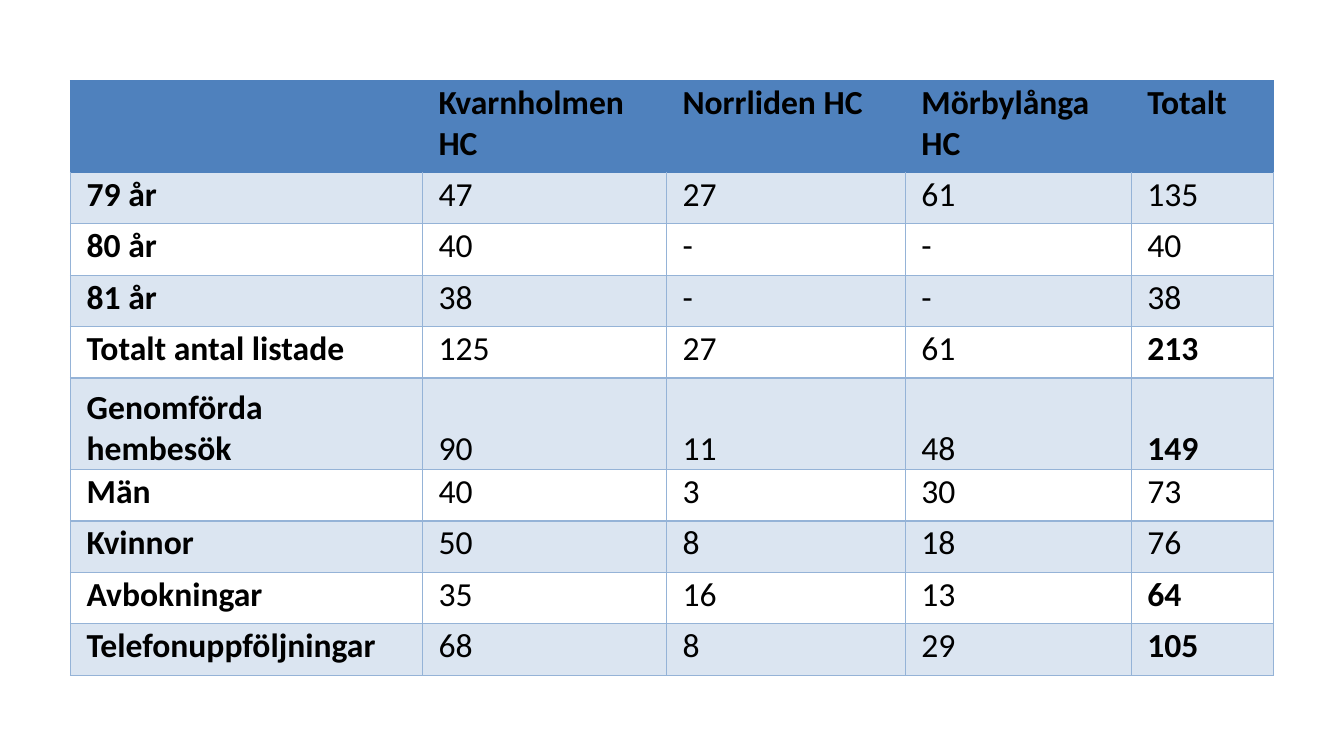
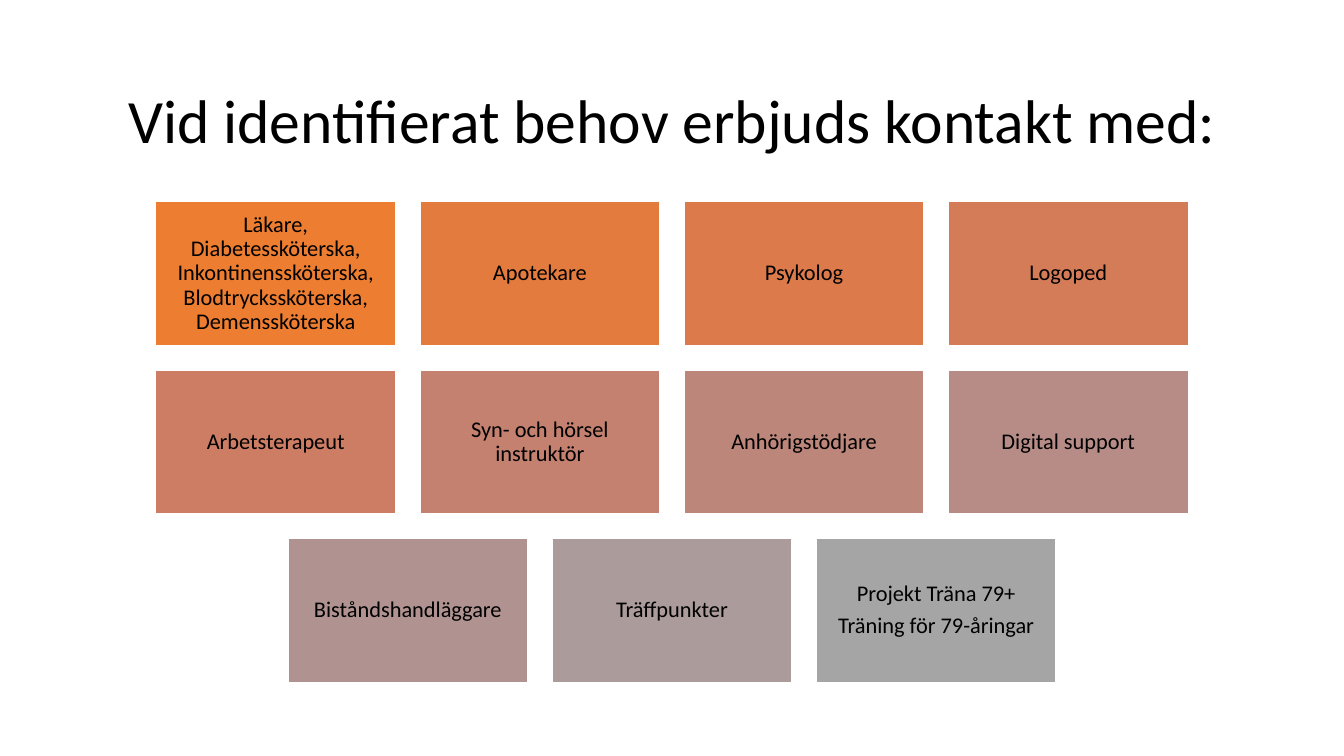
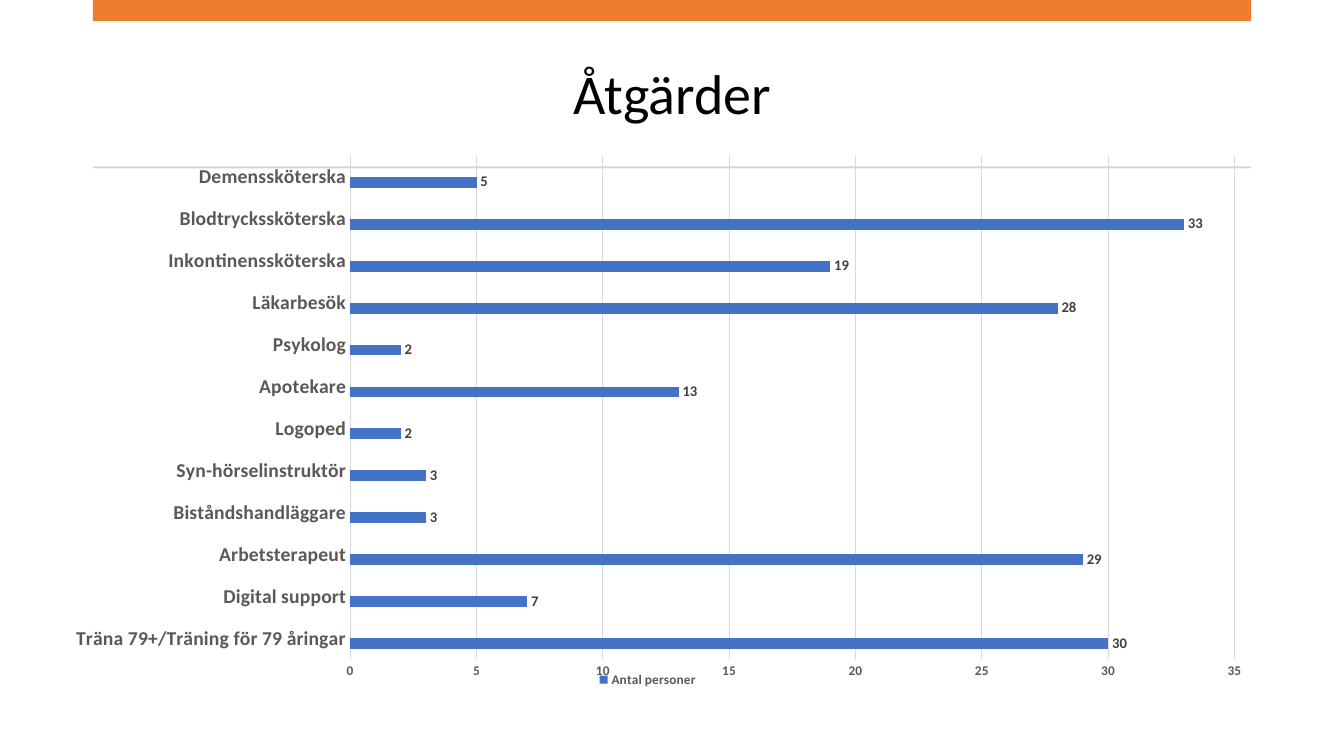
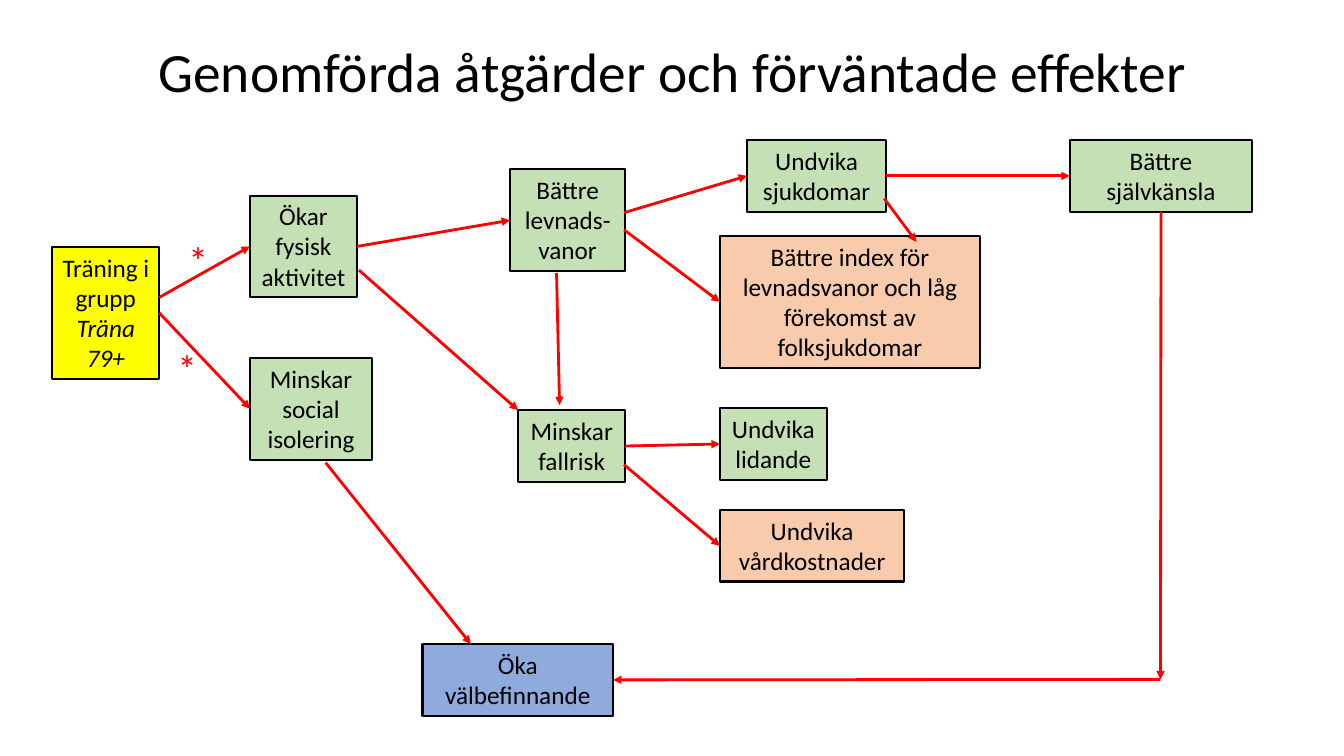
"""Build four slides on preventive home visits: results, contacts, measures and expected effects."""
from dataclasses import dataclass

from pptx import Presentation
from pptx.chart.data import CategoryChartData
from pptx.dml.color import RGBColor
from pptx.enum.chart import XL_CHART_TYPE, XL_LABEL_POSITION, XL_LEGEND_POSITION, XL_TICK_MARK
from pptx.enum.shapes import MSO_CONNECTOR, MSO_SHAPE
from pptx.enum.text import MSO_ANCHOR, PP_ALIGN
from pptx.oxml import parse_xml
from pptx.oxml.ns import nsdecls, qn
from pptx.util import Inches, Pt

RECTANGLE = MSO_SHAPE.RECTANGLE
STRAIGHT = MSO_CONNECTOR.STRAIGHT
LEFT, CENTER = PP_ALIGN.LEFT, PP_ALIGN.CENTER
TOP, MIDDLE, BOTTOM = MSO_ANCHOR.TOP, MSO_ANCHOR.MIDDLE, MSO_ANCHOR.BOTTOM
NO_TICK = XL_TICK_MARK.NONE
SITE_BOTTOM, SITE_LEFT, SITE_RIGHT = 2, 1, 3


@dataclass(frozen=True)
class Theme:
    font: str = "Calibri"
    text: str = "000000"
    white: str = "FFFFFF"
    accent: str = "ED7D31"
    rule: str = "D5D5D5"
    header: str = "4F81BD"
    band: str = "DBE5F1"
    border: str = "95B3D7"
    bar: str = "4472C4"
    grid: str = "D9D9D9"
    axis_text: str = "595959"
    label_text: str = "404040"
    activity: str = "FFFF00"
    effect: str = "C5E0B4"
    society: str = "F8CBAD"
    wellbeing: str = "8FAADC"
    arrow: str = "FF0000"
    contacts: tuple = ("ED7D31", "E47B3E", "DC7A4B", "D47B58", "CC7D64", "C48170",
                       "BD867B", "B78C86", "B09391", "AB9C9B", "A5A5A5")
    table_size: float = 24
    contact_size: float = 16
    flow_size: float = 18
    star_size: float = 28
    category_size: float = 14
    label_size: float = 10.5
    chart_size: float = 9.5


THEME = Theme()


def rgb(color):
    return RGBColor.from_string(color)


def write(frame, text, size, color=THEME.text, bold=False, align=CENTER, anchor=TOP,
          spacing=None, after=None, insets=(0.1, 0.05, 0.1, 0.05)):
    frame.word_wrap = True
    frame.vertical_anchor = anchor
    frame.margin_left, frame.margin_top, frame.margin_right, frame.margin_bottom = map(Inches, insets)
    frame.text = text
    for paragraph in frame.paragraphs:
        paragraph.alignment = align
        paragraph.line_spacing = spacing
        paragraph.space_after = after
        for run in paragraph.runs:
            run.font.name = THEME.font
            run.font.size = Pt(size)
            run.font.bold = bold
            run.font.color.rgb = rgb(color)


prs = Presentation()
prs.slide_width, prs.slide_height = Inches(13.33), Inches(7.5)
visits, contacts, measures, effects = [prs.slides.add_slide(prs.slide_layouts[6]) for _ in range(4)]

titles = [
    (contacts, "Vid identifierat behov erbjuds kontakt med:", 0.61, 1.24, 44),
    (measures, "Åtgärder", 0.37, 1.18, 40),
    (effects, "Genomförda åtgärder och förväntade effekter", 0.34, 0.8, 39.6),
]
for slide, text, top, height, size in titles:
    title = slide.shapes.add_textbox(Inches(0.92), Inches(top), Inches(11.5), Inches(height))
    write(title.text_frame, text, size, anchor=MIDDLE, spacing=0.9)

visit_rows = [
    ("", "Kvarnholmen HC", "Norrliden HC", "Mörbylånga HC", "Totalt"),
    ("79 år", "47", "27", "61", "135"),
    ("80 år", "40", "-", "-", "40"),
    ("81 år", "38", "-", "-", "38"),
    ("Totalt antal listade", "125", "27", "61", "213"),
    ("Genomförda hembesök", "90", "11", "48", "149"),
    ("Män", "40", "3", "30", "73"),
    ("Kvinnor", "50", "8", "18", "76"),
    ("Avbokningar", "35", "16", "13", "64"),
    ("Telefonuppföljningar", "68", "8", "29", "105"),
]
column_widths = (3.49, 2.42, 2.37, 2.24, 1.41)
two_line_rows = (0, 5)
key_totals = ("213", "149", "64", "105")
visit_table = visits.shapes.add_table(len(visit_rows), len(column_widths), Inches(0.7), Inches(0.8),
                                      Inches(11.93), Inches(5.9)).table
visit_table.first_row = visit_table.horz_banding = False
for column, width in zip(visit_table.columns, column_widths):
    column.width = Inches(width)
for r, values in enumerate(visit_rows):
    visit_table.rows[r].height = Inches(0.91 if r in two_line_rows else 0.51)
    for c, value in enumerate(values):
        cell = visit_table.cell(r, c)
        properties = cell._tc.get_or_add_tcPr()
        for side in "LRTB":
            edge = THEME.header if r == 0 or (r == 1 and side == "T") else THEME.border
            properties.append(parse_xml(
                f'<a:ln{side} {nsdecls("a")} w="12700"><a:solidFill><a:srgbClr val="{edge}"/>'
                f'</a:solidFill></a:ln{side}>'))
        cell.fill.solid()
        cell.fill.fore_color.rgb = rgb(THEME.header if r == 0 else THEME.band if r % 2 else THEME.white)
        write(cell.text_frame, value, THEME.table_size, align=LEFT,
              bold=r == 0 or c == 0 or value in key_totals)
        cell.margin_left = cell.margin_right = Inches(0.16)
        cell.margin_top, cell.margin_bottom = Inches(0.02), 0
        cell.vertical_anchor = BOTTOM if r == 5 else TOP

contact_rows = [
    ("Läkare, Diabetessköterska, Inkontinenssköterska, Blodtryckssköterska, Demenssköterska",
     "Apotekare", "Psykolog", "Logoped"),
    ("Arbetsterapeut", "Syn- och hörsel instruktör", "Anhörigstödjare", "Digital support"),
    ("Biståndshandläggare", "Träffpunkter", "Projekt Träna 79+\nTräning för 79-åringar"),
]
card_width, card_height, card_gap = 2.38, 1.43, 0.24
card_colors = iter(THEME.contacts)
for r, names in enumerate(contact_rows):
    row_left = (13.33 - len(names) * (card_width + card_gap) + card_gap) / 2
    for c, name in enumerate(names):
        card = contacts.shapes.add_shape(
            RECTANGLE, Inches(row_left + c * (card_width + card_gap)),
            Inches(2 + r * (card_height + card_gap)), Inches(card_width), Inches(card_height))
        card.shadow.inherit = False
        card.fill.solid()
        card.fill.fore_color.rgb = rgb(next(card_colors))
        card.line.color.rgb = rgb(THEME.white)
        card.line.width = Pt(1)
        write(card.text_frame, name, THEME.contact_size, anchor=MIDDLE, spacing=0.9,
              after=Pt(5.6), insets=(0.07,) * 4)

for top, height, color in [(0, 0.21, THEME.accent), (1.65, 0.02, THEME.rule)]:
    band = measures.shapes.add_shape(RECTANGLE, Inches(0.92), Inches(top), Inches(11.49), Inches(height))
    band.shadow.inherit = False
    band.fill.solid()
    band.fill.fore_color.rgb = rgb(color)
    band.line.fill.background()

persons = {
    "Träna 79+/Träning för 79 åringar": 30, "Digital support": 7, "Arbetsterapeut": 29,
    "Biståndshandläggare": 3, "Syn-hörselinstruktör": 3, "Logoped": 2, "Apotekare": 13,
    "Psykolog": 2, "Läkarbesök": 28, "Inkontinenssköterska": 19, "Blodtryckssköterska": 33,
    "Demenssköterska": 5,
}
chart_data = CategoryChartData()
chart_data.categories = list(persons)
chart_data.add_series("Antal personer", list(persons.values()))
chart_data.add_series("", [None] * len(persons))
chart = measures.shapes.add_chart(XL_CHART_TYPE.BAR_CLUSTERED, Inches(0.45), Inches(1.54),
                                  Inches(11.95), Inches(5.32), chart_data).chart
chart.has_title = False
chart.has_legend = True
chart.legend.position = XL_LEGEND_POSITION.BOTTOM
chart.legend.include_in_layout = False
category_axis, value_axis = chart.category_axis, chart.value_axis
value_axis.minimum_scale, value_axis.maximum_scale, value_axis.major_unit = 0, 35, 5
category_axis.major_tick_mark = value_axis.major_tick_mark = NO_TICK
value_axis.format.line.fill.background()
for line in (category_axis.format.line, value_axis.major_gridlines.format.line):
    line.color.rgb = rgb(THEME.grid)
    line.width = Pt(0.75)

bars = chart.plots[0]
bars.gap_width = 182
bars.vary_by_categories = False
for series, color in zip(bars.series, (THEME.bar, THEME.accent)):
    series.format.fill.solid()
    series.format.fill.fore_color.rgb = rgb(color)
bar_labels = bars.series[0].data_labels
bar_labels.show_value = True
bar_labels.position = XL_LABEL_POSITION.OUTSIDE_END

chart_fonts = [
    (chart.font, THEME.chart_size, THEME.text),
    (category_axis.tick_labels.font, THEME.category_size, THEME.axis_text),
    (value_axis.tick_labels.font, THEME.chart_size, THEME.axis_text),
    (chart.legend.font, THEME.chart_size, THEME.axis_text),
    (bar_labels.font, THEME.label_size, THEME.label_text),
]
for font, size, color in chart_fonts:
    font.name = THEME.font
    font.size = Pt(size)
    font.bold = True
    font.color.rgb = rgb(color)

chart_root = chart.element
chart_root.xpath("c:chart")[0].addnext(parse_xml(
    f'<c:spPr {nsdecls("c", "a")}><a:noFill/><a:ln><a:noFill/></a:ln></c:spPr>'))
chart_root.xpath(".//c:legendPos")[0].addnext(parse_xml(
    f'<c:legendEntry {nsdecls("c")}><c:idx val="0"/><c:delete val="1"/></c:legendEntry>'))
plot_area = chart_root.xpath(".//c:plotArea")[0]
for layout in plot_area.findall(qn("c:layout")):
    plot_area.remove(layout)
plot_area.insert(0, parse_xml(
    f'<c:layout {nsdecls("c")}><c:manualLayout><c:layoutTarget val="inner"/>'
    '<c:xMode val="edge"/><c:yMode val="edge"/><c:x val="0.253"/><c:y val="0"/>'
    '<c:w val="0.734"/><c:h val="0.94"/></c:manualLayout></c:layout>'))

flow_boxes = {
    "training": ("Träning i grupp\nTräna 79+", 0.52, 2.45, 1.06, 1.31, THEME.activity),
    "esteem": ("Bättre självkänsla", 10.61, 1.39, 1.81, 0.71, THEME.effect),
    "isolation": ("Minskar social isolering", 2.48, 3.55, 1.21, 1.01, THEME.effect),
    "habits": ("Bättre levnads-vanor", 5.06, 1.68, 1.14, 1.01, THEME.effect),
    "diseases": ("Undvika sjukdomar", 7.41, 1.39, 1.38, 0.71, THEME.effect),
    "index": ("Bättre index för levnadsvanor och låg förekomst av folksjukdomar",
              7.14, 2.34, 2.58, 1.31, THEME.society),
    "activity": ("Ökar fysisk aktivitet", 2.48, 1.94, 1.06, 1.01, THEME.effect),
    "falls": ("Minskar fallrisk", 5.14, 4.07, 1.06, 0.71, THEME.effect),
    "suffering": ("Undvika lidande", 7.14, 4.05, 1.06, 0.71, THEME.effect),
    "costs": ("Undvika vårdkostnader", 7.14, 5.06, 1.83, 0.71, THEME.society),
    "wellbeing": ("Öka välbefinnande", 4.19, 6.39, 1.89, 0.71, THEME.wellbeing),
}
steps = {}
for key, (text, left, top, width, height, color) in flow_boxes.items():
    step = effects.shapes.add_shape(RECTANGLE, Inches(left), Inches(top), Inches(width), Inches(height))
    step.shadow.inherit = False
    step.fill.solid()
    step.fill.fore_color.rgb = rgb(color)
    step.line.color.rgb = rgb(THEME.text)
    step.line.width = Pt(1.5)
    write(step.text_frame, text, THEME.flow_size)
    steps[key] = step
steps["training"].text_frame.paragraphs[1].runs[0].font.italic = True

arrows = [
    ((1.58, 2.95), ("activity", SITE_LEFT)),
    (("activity", SITE_RIGHT), ("habits", SITE_LEFT)),
    ((6.19, 2.11), ("diseases", SITE_LEFT)),
    (("diseases", SITE_RIGHT), ("esteem", SITE_LEFT)),
    ((3.56, 2.68), (5.14, 4.07)),
    ((6.19, 4.61), ("costs", SITE_LEFT)),
    (("falls", SITE_RIGHT), ("suffering", SITE_LEFT)),
    (("training", SITE_RIGHT), ("isolation", SITE_LEFT)),
    ((3.23, 4.59), (4.67, 6.39)),
    ((11.51, 6.74), ("wellbeing", SITE_RIGHT)),
    (("esteem", SITE_BOTTOM), (11.51, 6.74)),
    ((6.19, 2.28), ("index", SITE_LEFT)),
    ((8.77, 1.97), (9.09, 2.4)),
    ((5.52, 2.71), (5.55, 4.02)),
]
for start, end in arrows:
    arrow = effects.shapes.add_connector(STRAIGHT, 0, 0, 0, 0)
    if start[0] in steps:
        arrow.begin_connect(steps[start[0]], start[1])
    else:
        arrow.begin_x, arrow.begin_y = map(Inches, start)
    if end[0] in steps:
        arrow.end_connect(steps[end[0]], end[1])
    else:
        arrow.end_x, arrow.end_y = map(Inches, end)
    arrow.line.color.rgb = rgb(THEME.arrow)
    arrow.line.width = Pt(2)
    outline = arrow._element.spPr
    outline.find(qn("a:ln")).append(parse_xml(f'<a:tailEnd {nsdecls("a")} type="triangle"/>'))
    outline.append(parse_xml(f'<a:effectLst {nsdecls("a")}/>'))

for left, top in [(1.77, 2.3), (1.66, 3.37)]:
    star = effects.shapes.add_textbox(Inches(left), Inches(top), Inches(0.38), Inches(0.57))
    write(star.text_frame, "*", THEME.star_size, color=THEME.arrow)

prs.save("out.pptx")
